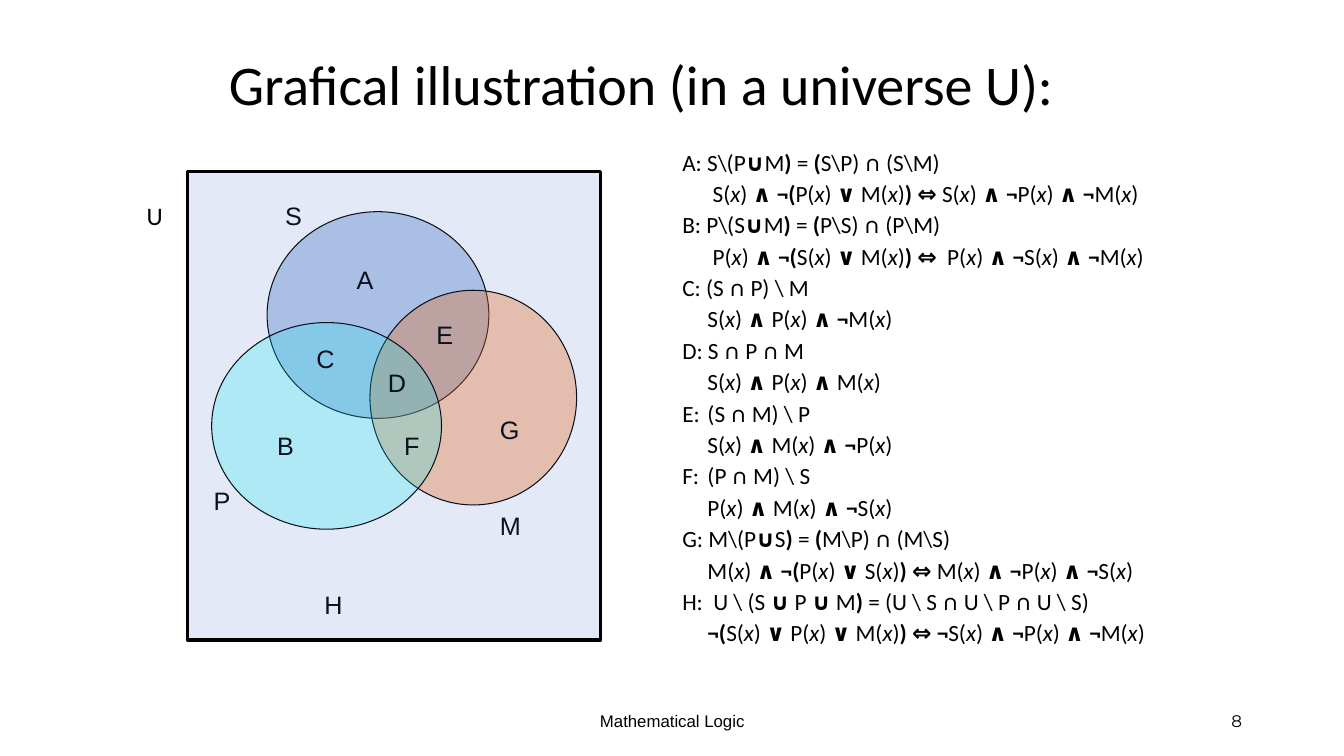
import itertools

import lxml.etree
import pptx
import pptx.dml.color
import pptx.enum.shapes
import pptx.enum.text
import pptx.oxml.ns
import pptx.util

SHAPE = pptx.enum.shapes.MSO_SHAPE
ALIGN = pptx.enum.text.PP_ALIGN
MIDDLE = pptx.enum.text.MSO_ANCHOR.MIDDLE

# --- Content: *...* is bold, the variable x is always italic ---
TITLE = "Grafical illustration (in a universe U):"
REGIONS = [
    ("A: S\\(P*∪*M*) *=* (*S\\P) *∩ *(S\\M)",
     " S(x) *∧ ¬(*P(x) *∨ *M(x)*) ⇔ *S(x) *∧ ¬*P(x) *∧ ¬*M(x)"),
    ("B: P\\(S*∪*M*) *=* (*P\\S) *∩ *(P\\M)",
     " P(x) *∧ ¬(*S(x) *∨ *M(x)*) ⇔*  P(x) *∧ ¬*S(x) *∧ ¬*M(x)"),
    ("C: (S *∩ *P) \\ M", "S(x) *∧ *P(x) *∧ ¬*M(x)"),
    ("D: S *∩* P *∩* M", "S(x) *∧ *P(x) *∧ *M(x)"),
    ("E: \t(S *∩* M) \\ P", "S(x) *∧ *M(x) *∧ ¬*P(x)"),
    ("F: \t(P *∩* M) \\ S", "P(x) *∧ *M(x) *∧ ¬*S(x)"),
    ("G: M\\(P*∪*S*) *=* (*M\\P) *∩ *(M\\S)",
     "M(x) *∧ ¬(*P(x) *∨ *S(x)*) ⇔* M(x) *∧ ¬*P(x) *∧ ¬*S(x)"),
    ("H:  U \\ (S *∪ *P *∪* M*)* = (U \\ S *∩ *U \\ P *∩ *U \\ S)",
     "*¬(*S(x) *∨ *P(x) *∨ *M(x)*) ⇔ ¬*S(x) *∧ ¬*P(x) *∧ ¬*M(x)"),
]

# Grid of 0.1 inch cells: left column, top row, columns, rows
CELL = 0.1
COLUMNS, ROWS = 133.33, 75
TITLE_AREA = (21.7, 5, 95, 7.3)
FORMULA_AREA = (66.7, 14.7, 62.5, 54.8)
UNIVERSE_AREA = (18.6, 17, 41, 46.5)
UNIVERSE_LABEL_AREA = (12.1, 19.4, 6.5, 4)
SETS = {
    "S": (26.5, 21, 22, 20.5),
    "M": (36.7, 28.8, 20.5, 21.3),
    "P": (21, 32, 22.8, 20.5),
}
LABEL_ROWS = 4
LABELS = {  # left column, top row, columns
    "S": (27.3, 19.4, 4.7), "P": (20.2, 47.7, 4.7), "M": (48.6, 50.1, 5.2),
    "A": (34.4, 25.7, 3.9), "B": (26.5, 42.2, 4.7), "C": (30.4, 33.6, 3.9),
    "D": (37.5, 35.9, 3.9), "E": (42.3, 31.2, 4.7), "F": (39.1, 42.2, 3.2),
    "G": (48.6, 40.6, 3.9), "H": (31.2, 58, 7.1),
}
FOOTER = ("Mathematical Logic", (44.2, 69.5, 45, 4))
PAGE = ("8", (94.2, 69.5, 30, 4))


class Theme:
    ink = "000000"
    universe = ("4472C4", 15)  # colour, opacity in percent
    sets = {"S": ("4472C4", 35), "M": ("FF6600", 33), "P": ("00FFFF", 23)}
    main_font, label_font, page_font = "Calibri", "Arial", "Montserrat"
    title_size, formula_size, label_size, footer_size = 40, 16.6, 18, 12
    set_line, universe_line = 0.75, 2.25


def place(area):
    return [pptx.util.Inches(cells * CELL) for cells in area]


def rgb(colour):
    return pptx.dml.color.RGBColor.from_string(colour)


def style(paragraph, font, size, align=ALIGN.LEFT):
    paragraph.alignment = align
    paragraph.font.name = font
    paragraph.font.size = pptx.util.Pt(size)
    paragraph.font.color.rgb = rgb(Theme.ink)


def add_text(slide, text, area, font, size, align=ALIGN.LEFT, anchor=None):
    frame = slide.shapes.add_textbox(*place(area)).text_frame
    frame.word_wrap = True
    frame.vertical_anchor = anchor
    frame.text = text
    style(frame.paragraphs[0], font, size, align)


def add_region(slide, preset, area, tint, line_width):
    region = slide.shapes.add_shape(preset, *place(area))
    colour, opacity = tint
    region.shadow.inherit = False
    region.fill.solid()
    region.fill.fore_color.rgb = rgb(colour)
    region.line.color.rgb = rgb(Theme.ink)
    region.line.width = pptx.util.Pt(line_width)
    qn = pptx.oxml.ns.qn
    fill = region.fill._xPr.find(qn("a:solidFill"))
    lxml.etree.SubElement(fill[0], qn("a:alpha"), val=str(opacity * 1000))


def write_formula(paragraph, formula):
    for index, part in enumerate(formula.split("*")):
        for is_variable, letters in itertools.groupby(part, lambda c: c == "x"):
            run = paragraph.add_run()
            run.text = "".join(letters)
            if index % 2:
                run.font.bold = True
            if is_variable:
                run.font.italic = True


def add_formulas(slide):
    frame = slide.shapes.add_textbox(*place(FORMULA_AREA)).text_frame
    frame.word_wrap = True
    lines = [line for sets, logic in REGIONS for line in (sets, "\t" + logic)]
    hanging = pptx.util.Inches(0.25)
    for index, line in enumerate(lines):
        paragraph = frame.add_paragraph() if index else frame.paragraphs[0]
        write_formula(paragraph, line)
        style(paragraph, Theme.main_font, Theme.formula_size)
        paragraph.line_spacing = 0.8
        paragraph.space_before = pptx.util.Pt(6.5 if index else 0)
        properties = paragraph._p.get_or_add_pPr()
        properties.set("marL", str(hanging))
        properties.set("indent", str(-hanging))


def main():
    deck = pptx.Presentation()
    deck.slide_width, deck.slide_height = place((COLUMNS, ROWS))
    slide = deck.slides.add_slide(deck.slide_layouts[5])

    # Title
    title = slide.shapes.title
    title.left, title.top, title.width, title.height = place(TITLE_AREA)
    title.text_frame.text = TITLE
    title.text_frame.vertical_anchor = MIDDLE
    style(title.text_frame.paragraphs[0], Theme.main_font, Theme.title_size)
    title.text_frame.paragraphs[0].line_spacing = 0.9

    # Formulas and footer
    add_formulas(slide)
    add_text(slide, *FOOTER, Theme.label_font, Theme.footer_size, ALIGN.CENTER, MIDDLE)
    add_text(slide, *PAGE, Theme.page_font, Theme.footer_size, ALIGN.RIGHT, MIDDLE)

    # Venn diagram, with the tinted universe laid over the sets
    for name, area in SETS.items():
        add_region(slide, SHAPE.OVAL, area, Theme.sets[name], Theme.set_line)
    for name, spot in LABELS.items():
        add_text(slide, name, (*spot, LABEL_ROWS), Theme.label_font, Theme.label_size)
    add_region(slide, SHAPE.RECTANGLE, UNIVERSE_AREA, Theme.universe, Theme.universe_line)
    add_text(slide, "U", UNIVERSE_LABEL_AREA, Theme.main_font, Theme.label_size, ALIGN.CENTER)

    deck.save("out.pptx")


if __name__ == "__main__":
    main()
